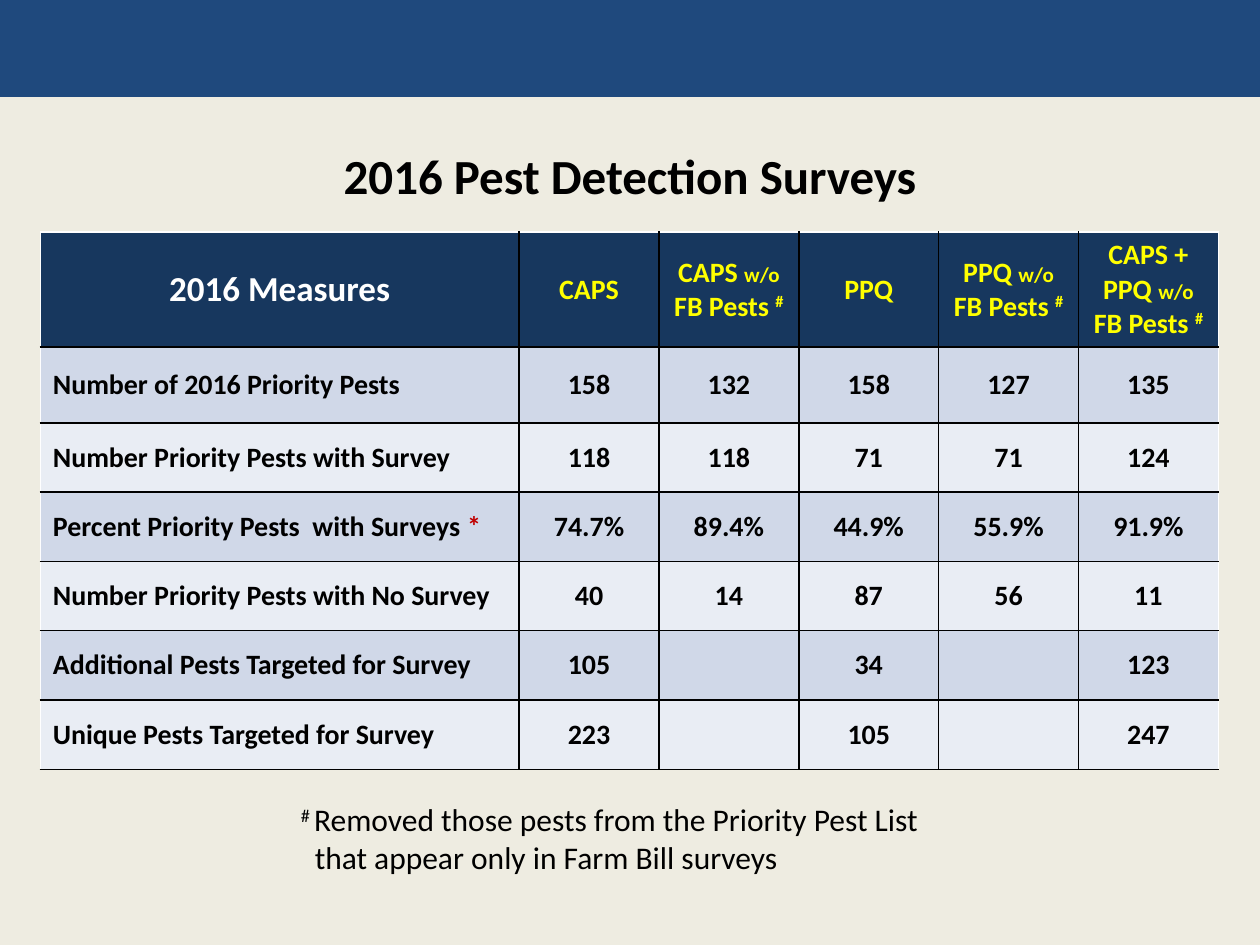
"""Build the 2016 pest detection survey slide."""
from typing import NamedTuple

from lxml import etree
from pptx import Presentation
from pptx.dml.color import RGBColor
from pptx.enum.shapes import MSO_SHAPE
from pptx.enum.text import MSO_ANCHOR, PP_ALIGN
from pptx.oxml.ns import qn
from pptx.util import Inches, Pt

RECTANGLE = MSO_SHAPE.RECTANGLE
MIDDLE = MSO_ANCHOR.MIDDLE
CENTER, LEFT = PP_ALIGN.CENTER, PP_ALIGN.LEFT
FONT = "Calibri"
BLACK, WHITE, YELLOW, RED = "000000", "FFFFFF", "FFFF00", "C00000"
BLUE, NAVY, CREAM = "1F497D", "17375E", "EEECE1"
BANDS = ("D0D8E8", "E9EDF4")
COLUMN_WIDTHS = [3.8] + [1.11] * 5
ROW_HEIGHTS = [0.91, 0.6] + [0.55] * 5


class Span(NamedTuple):
    text: str
    size: float = 16
    color: str = BLACK
    bold: bool = True
    raised: bool = False


class Measure(NamedTuple):
    label: str
    values: tuple[str, ...]
    mark: str = ""


MEASURES = [
    Measure("Number of 2016 Priority Pests", ("158", "132", "158", "127", "135")),
    Measure("Number Priority Pests with Survey", ("118", "118", "71", "71", "124")),
    Measure("Percent Priority Pests  with Surveys ",
            ("74.7%", "89.4%", "44.9%", "55.9%", "91.9%"), "*"),
    Measure("Number Priority Pests with No Survey", ("40", "14", "87", "56", "11")),
    Measure("Additional Pests Targeted for Survey", ("105", "", "34", "", "123")),
    Measure("Unique Pests Targeted for Survey", ("223", "", "105", "", "247")),
]


def paint(target, color: str) -> None:
    """Give a fill a solid colour."""
    target.solid()
    target.fore_color.rgb = RGBColor.from_string(color)


def write(paragraph, spans: list[Span], align=LEFT) -> None:
    """Add formatted runs to a paragraph."""
    paragraph.alignment = align
    for span in spans:
        run = paragraph.add_run()
        run.text = span.text
        font = run.font
        font.name, font.size, font.bold = FONT, Pt(span.size), span.bold
        font.color.rgb = RGBColor.from_string(span.color)
        if span.raised:
            run._r.get_or_add_rPr().set("baseline", "30000")


def without_farm_bill(program: str) -> list[Span]:
    """Return the heading of a column that leaves out Farm Bill pests."""
    return [Span(program + " ", color=YELLOW), Span("w/o", 12, YELLOW),
            Span(" FB Pests ", color=YELLOW), Span("#", color=YELLOW, raised=True)]


def set_borders(cell, left: str, right: str, top: str, bottom: str) -> None:
    """Draw one-point borders around a cell."""
    properties = cell._tc.get_or_add_tcPr()
    sides = {"a:lnL": left, "a:lnR": right, "a:lnT": top, "a:lnB": bottom}
    for tag, color in sides.items():
        line = etree.SubElement(properties, qn(tag), w=str(Pt(1)))
        solid = etree.SubElement(line, qn("a:solidFill"))
        etree.SubElement(solid, qn("a:srgbClr"), val=color)


def add_title(page) -> None:
    """Place the title and give its text a soft shadow."""
    title = page.shapes.title
    title.left, title.top = Inches(0.5), Inches(1)
    title.width, title.height = Inches(9), Inches(0.78)
    title.text_frame.vertical_anchor = MIDDLE
    paragraph = title.text_frame.paragraphs[0]
    write(paragraph, [Span("2016 Pest Detection Surveys", 28)], CENTER)
    effects = etree.Element(qn("a:effectLst"))
    shadow = etree.SubElement(effects, qn("a:outerShdw"), blurRad=str(Pt(3)),
                              dist=str(Pt(3)), dir="2700000", algn="tl")
    color = etree.SubElement(shadow, qn("a:srgbClr"), val=BLACK)
    etree.SubElement(color, qn("a:alpha"), val="43000")
    paragraph.runs[0]._r.rPr.find(qn("a:solidFill")).addnext(effects)


def add_measures(page) -> None:
    """Add the table of survey measures."""
    headings = [[Span("2016 Measures", 20, WHITE)], [Span("CAPS", color=YELLOW)],
                without_farm_bill("CAPS"), [Span("PPQ", color=YELLOW)],
                without_farm_bill("PPQ"), without_farm_bill("CAPS + PPQ")]
    rows = [headings]
    for measure in MEASURES:
        label = [Span(measure.label)]
        if measure.mark:
            label.append(Span(measure.mark, color=RED))
        rows.append([label] + [[Span(value)] if value else [] for value in measure.values])

    frame = page.shapes.add_table(len(rows), len(COLUMN_WIDTHS), Inches(0.32), Inches(1.84),
                                  Inches(sum(COLUMN_WIDTHS)), Inches(sum(ROW_HEIGHTS)))
    table = frame.table
    for column, width in zip(table.columns, COLUMN_WIDTHS):
        column.width = Inches(width)
    last = len(COLUMN_WIDTHS) - 1
    for r, (row, height) in enumerate(zip(rows, ROW_HEIGHTS)):
        table.rows[r].height = Inches(height)
        for c, spans in enumerate(row):
            cell = table.cell(r, c)
            set_borders(cell, WHITE if c == 0 else BLACK, WHITE if c == last else BLACK,
                        WHITE if r == 0 else BLACK, BLACK)
            paint(cell.fill, BANDS[(r - 1) % 2] if r else NAVY)
            cell.vertical_anchor = MIDDLE
            if r and c:
                cell.margin_left = cell.margin_right = 0
                cell.margin_top = cell.margin_bottom = 0
            write(cell.text_frame.paragraphs[0], spans, LEFT if r and c == 0 else CENTER)


def add_footnote(page) -> None:
    """Add the note that explains the number sign."""
    box = page.shapes.add_textbox(Inches(2.29), Inches(6.3), Inches(5.17), Inches(0.71))
    frame = box.text_frame
    frame.word_wrap = False
    write(frame.paragraphs[0], [
        Span("# ", 18, bold=False, raised=True),
        Span("Removed those pests from the Priority Pest List", 18, bold=False)])
    second = frame.add_paragraph()
    second._p.get_or_add_pPr().set("marL", str(Inches(0.11)))
    write(second, [Span("that appear only in Farm Bill surveys", 18, bold=False)])


def main() -> None:
    """Build and save the slide."""
    deck = Presentation()
    deck.slide_width, deck.slide_height = Inches(10), Inches(7.5)
    page = deck.slides.add_slide(deck.slide_layouts[5])
    paint(page.background.fill, CREAM)
    banner = page.shapes.add_shape(RECTANGLE, 0, 0, deck.slide_width, Inches(0.77))
    banner.shadow.inherit = False
    paint(banner.fill, BLUE)
    banner.line.fill.background()
    add_title(page)
    add_measures(page)
    add_footnote(page)
    deck.save("out.pptx")


if __name__ == "__main__":
    main()
